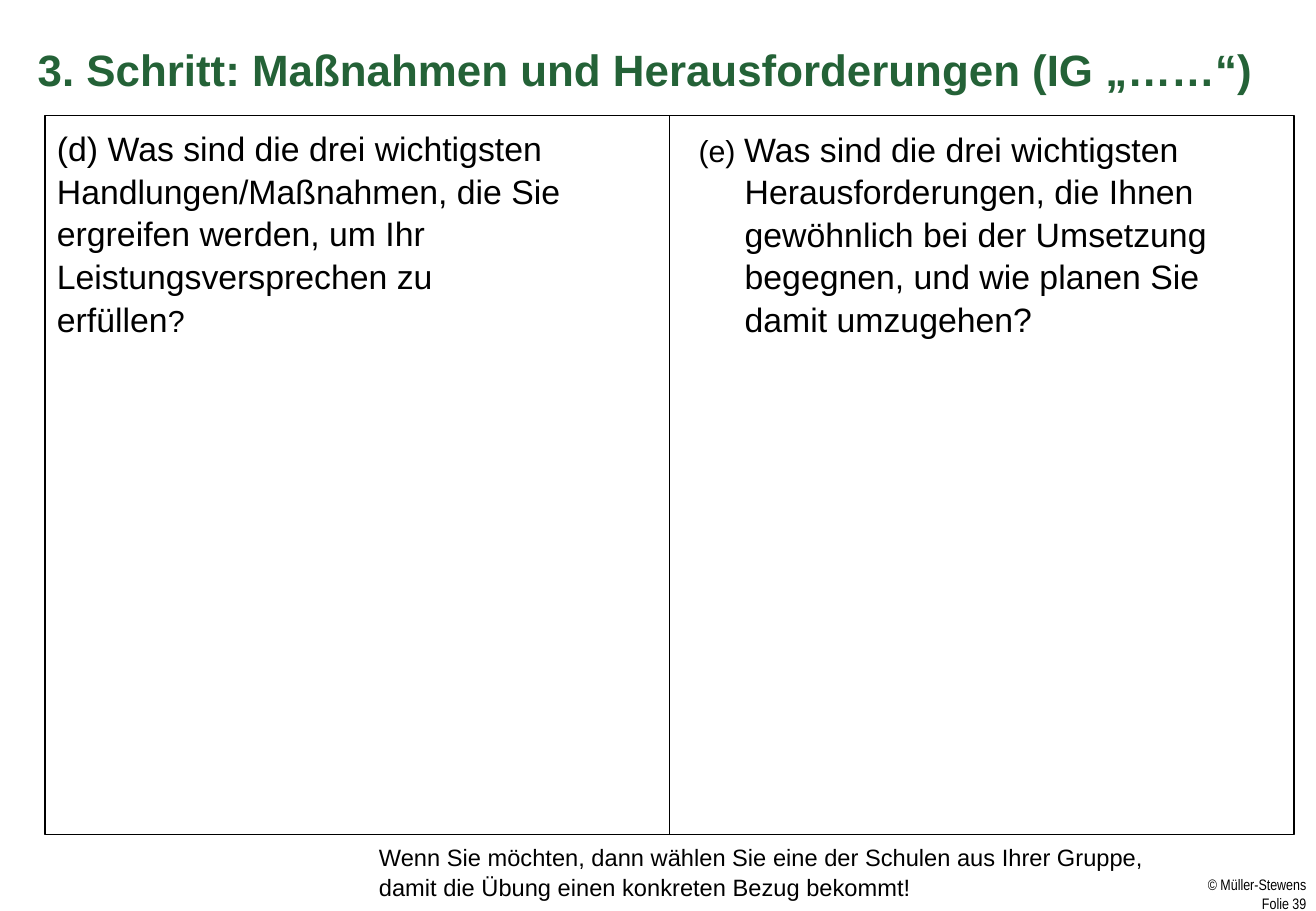
"""Build the worksheet slide on measures and challenges."""
from lxml import etree
from pptx import Presentation
from pptx.dml.color import RGBColor
from pptx.enum.shapes import MSO_CONNECTOR, MSO_SHAPE
from pptx.enum.text import MSO_ANCHOR, MSO_AUTO_SIZE, PP_ALIGN
from pptx.oxml.ns import qn
from pptx.util import Inches, Pt

LEFT, RIGHT = PP_ALIGN.LEFT, PP_ALIGN.RIGHT
TOP, MIDDLE = MSO_ANCHOR.TOP, MSO_ANCHOR.MIDDLE
RECT, STRAIGHT = MSO_SHAPE.RECTANGLE, MSO_CONNECTOR.STRAIGHT
FIXED = MSO_AUTO_SIZE.NONE

TITLE = "3.\u00a0Schritt: Maßnahmen und Herausforderungen (IG „……“)"
MEASURES = [[
    ("(d) Was sind die drei wichtigsten Handlungen/Maßnahmen, die Sie "
     "ergreifen werden, um Ihr Leistungsversprechen zu erfüllen", "body"),
    ("?", "mark"),
]]
HURDLES = [[
    ("(e) ", "mark"),
    ("Was sind die drei wichtigsten Herausforderungen, die Ihnen gewöhnlich "
     "bei der Umsetzung begegnen, und wie planen Sie damit umzugehen?", "body"),
]]
HINT = [
    [("Wenn Sie möchten, dann wählen Sie eine der Schulen aus Ihrer Gruppe,", "hint")],
    [("damit die Übung einen konkreten Bezug bekommt!", "hint")],
]
CREDIT = [[("© Müller-Stewens", "foot")], [("Folie 39", "foot")]]

THEME = {
    "ink": "000000", "line": 1, "lead": 1.05,
    "title": {"name": "Arial", "size": 26, "color": "246237", "bold": True},
    "body": {"name": "Arial", "size": 20},
    "mark": {"name": "Arial", "size": 18},
    "hint": {"name": "Arial", "size": 14},
    "foot": {"name": "Arial Narrow", "size": 9},
}

COLS, ROWS, CELL = 108.3, 75, 0.1
HANG = 3.8
FRAME = (3.7, 9.5, 102.8, 59.2)
HEAD = (2.1, 2.1, 102.4, 7.1)
BOXES = [
    (MEASURES, (3.7, 9.9, 44.2, 14.4), {}),
    (HURDLES, (56.5, 9.9, 48.8, 17.8), {"hang": HANG}),
    (HINT, (30.2, 68.8, 65.7, 5.7), {}),
    (CREDIT, (76, 72, 31.5, 3), {"align": RIGHT, "inset": False}),
]


def grid(cells):
    return Inches(round(cells * CELL, 2))


def style(font, key):
    look = THEME[key]
    for name, value in {"name": look["name"], "size": Pt(look["size"]),
                        "bold": look.get("bold", False)}.items():
        setattr(font, name, value)
    font.color.rgb = RGBColor.from_string(look.get("color", THEME["ink"]))


def write(shape, paras, align=LEFT, anchor=TOP, hang=0, inset=True, lead=THEME["lead"]):
    frame = shape.text_frame
    for name, value in {"word_wrap": True, "auto_size": FIXED,
                        "vertical_anchor": anchor}.items():
        setattr(frame, name, value)
    for side, gap in {"left": 1, "right": 1, "top": 0.5, "bottom": 0.5}.items():
        setattr(frame, "margin_" + side, grid(gap if inset else 0))
    for i, runs in enumerate(paras):
        para = frame.add_paragraph() if i else frame.paragraphs[0]
        for name, value in {"alignment": align, "line_spacing": lead,
                            "space_before": Pt(0), "space_after": Pt(0)}.items():
            setattr(para, name, value)
        if hang:
            props = para._p.get_or_add_pPr()
            props.set("marL", str(grid(hang)))
            props.set("indent", str(-grid(hang)))
        for text, key in runs:
            run = para.add_run()
            run.text = text
            style(run.font, key)


def stroke(line):
    line.color.rgb = RGBColor.from_string(THEME["ink"])
    line.width = Pt(THEME["line"])


def main():
    deck = Presentation()
    deck.slide_width, deck.slide_height = grid(COLS), grid(ROWS)
    slide = deck.slides.add_slide(deck.slide_layouts[5])
    shapes = slide.shapes

    title = shapes.title
    for name, value in zip(("left", "top", "width", "height"), HEAD):
        setattr(title, name, grid(value))
    write(title, [[(TITLE, "title")]], anchor=MIDDLE, lead=1.0)

    frame = shapes.add_shape(RECT, *map(grid, FRAME))
    frame.shadow.inherit = False
    frame.fill.background()
    stroke(frame.line)

    rule = shapes.add_connector(STRAIGHT, 0, 0, 0, 0)
    rule.begin_connect(frame, 0)
    rule.end_connect(frame, 2)
    stroke(rule.line)
    etree.SubElement(rule._element.spPr, qn("a:effectLst"))

    for paras, place, look in BOXES:
        write(shapes.add_textbox(*map(grid, place)), paras, **look)

    deck.save("out.pptx")


if __name__ == "__main__":
    main()
